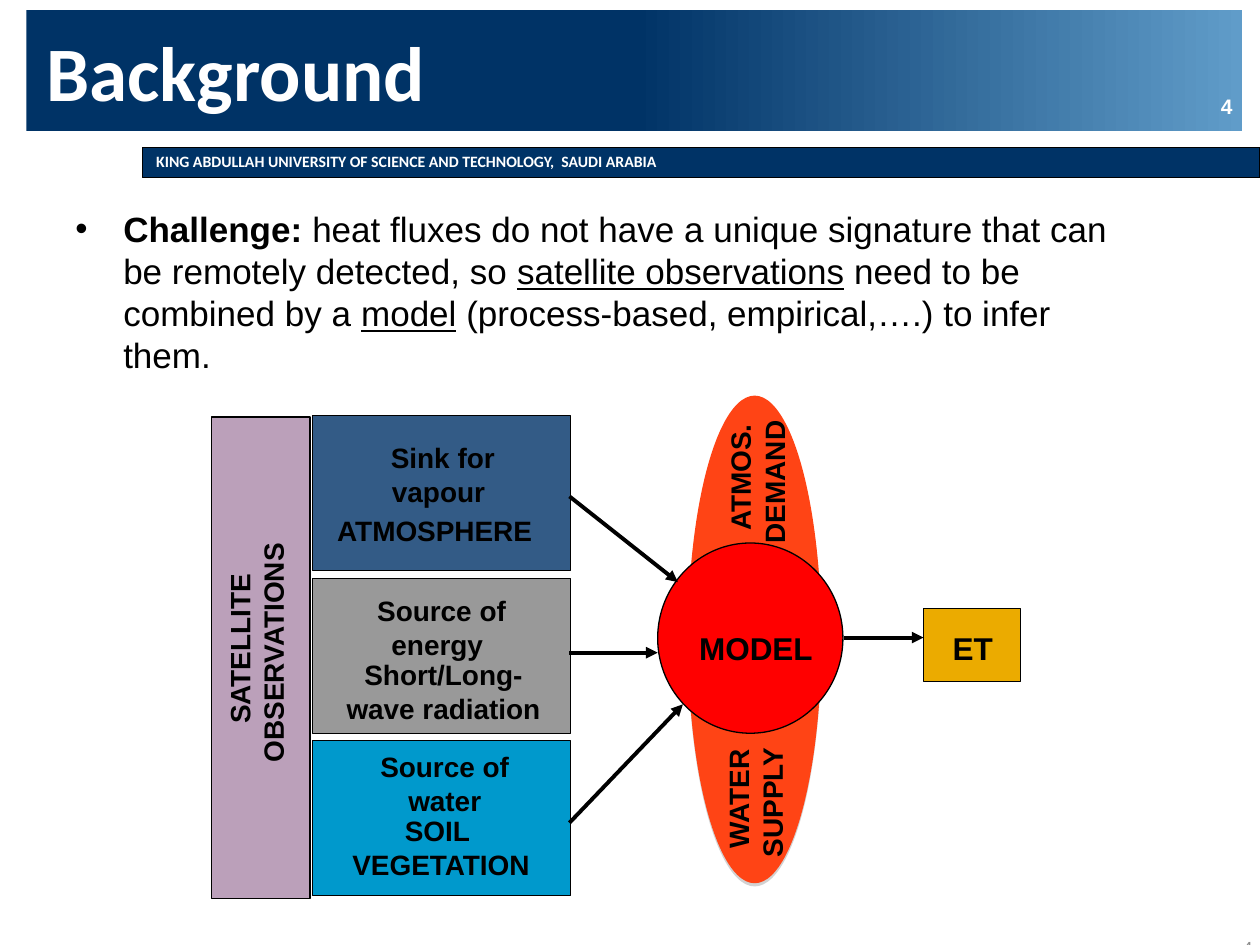
from dataclasses import dataclass

from lxml import etree
from pptx import Presentation, util as u
from pptx.dml.color import RGBColor
from pptx.enum import shapes, text
from pptx.oxml import ns

COLS, ROWS = 100, 75


@dataclass(frozen=True)
class Theme:
    navy: str = "003366"
    sky: str = "609CC9"
    white: str = "FFFFFF"
    black: str = "000000"
    grey: str = "8C8C8C"
    atmosphere: str = "335B86"
    energy: str = "999999"
    water: str = "0099CC"
    satellite: str = "BBA0BA"
    flux: str = "FF4415"
    model: str = "FF0000"
    output: str = "EBAB00"
    body_font: str = "Arial"
    head_font: str = "Calibri"
    title: int = 44
    body: int = 20
    large: int = 18
    label: int = 16
    number: int = 12
    small: int = 10
    banner: int = 9


T = Theme()
RECT, OVAL = shapes.MSO_SHAPE.RECTANGLE, shapes.MSO_SHAPE.OVAL
LEFT, CENTER, RIGHT = text.PP_ALIGN.LEFT, text.PP_ALIGN.CENTER, text.PP_ALIGN.RIGHT
TOP, MIDDLE, BOTTOM = text.MSO_ANCHOR.TOP, text.MSO_ANCHOR.MIDDLE, text.MSO_ANCHOR.BOTTOM


def add_xml(parent, tag, **attrs):
    return etree.SubElement(parent, ns.qn(tag), attrs)


def write(p, content, size=T.label, bold=True, color=T.black, font=T.body_font, underline=False):
    r = p.add_run()
    r.text = content
    r.font.size, r.font.bold, r.font.name = u.Pt(size), bold, font
    r.font.color.rgb = RGBColor.from_string(color)
    if underline:
        r.font.underline = True


class Canvas:
    """Style and current slide; lengths are grid columns and rows."""

    def __init__(self, prs):
        self.s = prs.slides.add_slide(prs.slide_layouts[6])
        self.col, self.row = prs.slide_width / COLS, prs.slide_height / ROWS

    def place(self, x, y, w, h):
        return [round(v * k) for v, k in zip((x, y, w, h), (self.col, self.row) * 2)]

    def shape(self, at, fill, kind=RECT, line=True):
        sp = self.s.shapes.add_shape(kind, *self.place(*at))
        sp.shadow.inherit = False
        if isinstance(fill, tuple):
            sp.fill.gradient()
            sp.fill.gradient_angle = 0
            for stop, color, pos in zip(sp.fill.gradient_stops, fill, (0.5, 1)):
                stop.color.rgb, stop.position = RGBColor.from_string(color), pos
        else:
            sp.fill.solid()
            sp.fill.fore_color.rgb = RGBColor.from_string(fill)
        if line:
            sp.line.color.rgb = RGBColor.from_string(T.black)
            sp.line.width = u.Pt(0.75)
        else:
            sp.line.fill.background()
        return sp

    def drop_shadow(self, sp):
        effects = sp._element.spPr.find(ns.qn("a:effectLst"))
        shadow = add_xml(effects, "a:outerShdw", blurRad="0", dist=str(u.Pt(1.8)),
                         dir="5400000", rotWithShape="0")
        add_xml(add_xml(shadow, "a:srgbClr", val="808080"), "a:alpha", val="35000")

    def text(self, at, *paragraphs, align=CENTER, anchor=TOP, inset=0.1,
             rotation=0, indent=0, bullet=None, **fmt):
        """Each paragraph is a string or a list of (string, format) runs."""
        sp = self.s.shapes.add_textbox(*self.place(*at))
        sp.rotation = rotation
        tf = sp.text_frame
        tf.word_wrap, tf.vertical_anchor = True, anchor
        tf.margin_left = tf.margin_right = u.Inches(inset)
        if anchor == TOP:
            tf.auto_size = text.MSO_AUTO_SIZE.SHAPE_TO_FIT_TEXT
        for i, runs in enumerate(paragraphs):
            p = tf.add_paragraph() if i else tf.paragraphs[0]
            p.alignment = align
            if indent:
                hang = round(indent * self.col)
                pPr = p._p.get_or_add_pPr()
                pPr.set("marL", str(hang))
                pPr.set("indent", str(-hang))
                if bullet:
                    add_xml(pPr, "a:buFont", typeface=T.body_font)
                    add_xml(pPr, "a:buChar", char=bullet)
            for content, extra in [(runs, {})] if isinstance(runs, str) else runs:
                write(p, content, **{**fmt, **extra})

    def arrow(self, x1, y1, x2, y2):
        c = self.s.shapes.add_connector(shapes.MSO_CONNECTOR.STRAIGHT, *self.place(x1, y1, x2, y2))
        c.line.color.rgb = RGBColor.from_string(T.black)
        c.line.width = u.Pt(2.25)
        add_xml(c.line._get_or_add_ln(), "a:tailEnd", type="triangle")
        add_xml(c._element.spPr, "a:effectLst")


def header(c):
    c.shape((11.3, 11.7, 88.7, 2.4), T.navy)
    c.text((12.4, 10.1, 87.3, 5.4), "KING ABDULLAH UNIVERSITY OF SCIENCE AND TECHNOLOGY,  SAUDI ARABIA",
           align=LEFT, anchor=MIDDLE, inset=0, indent=2,
           size=T.banner, color=T.white, font=T.head_font)
    c.shape((2.1, 0.8, 96.5, 9.6), (T.navy, T.sky), line=False)
    c.text((3.7, 1.3, 94.4, 8.5), "Background", align=LEFT, anchor=BOTTOM, inset=0,
           size=T.title, color=T.white, font=T.head_font)
    c.text((75.5, 6.9, 23.3, 4), "4", align=RIGHT, size=T.number, color=T.white)


def challenge(c):
    under = {"underline": True}
    c.text((5, 16, 84.8, 14.5), [
        ("Challenge:", {"bold": True}),
        (" heat fluxes do not have a unique signature that can be remotely detected, so ", {}),
        ("satellite observations", under),
        (" need to be combined by a ", {}),
        ("model", under),
        (" (process-based, empirical,….) to infer them.", {}),
    ], align=LEFT, indent=3.8, bullet="•", size=T.body, bold=False)


def diagram(c):
    def tall(label):
        return [(" ", {"size": T.large}), (label, {})]

    # Observed inputs, stacked at an equal pitch
    for i, fill in enumerate((T.atmosphere, T.energy, T.water)):
        c.shape((24.8, 33 + 12.9 * i, 20.5, 12.3), fill)
    c.shape((16.8, 33.1, 7.8, 38.2), T.satellite)

    # Model and its output
    c.drop_shadow(c.shape((54.6, 31.4, 10.6, 38.7), T.flux, OVAL, line=False))
    c.shape((52.2, 43.1, 14.7, 15.1), T.model, OVAL)
    c.shape((73.3, 48.3, 7.7, 5.8), T.output)

    # Arrows from inputs to model to output
    for ends in ((45.2, 39.4, 53.8, 46.2), (45.2, 51.8, 52.2, 51.8),
                 (45.2, 65.3, 54.2, 55.9), (67, 50.6, 73.3, 50.6)):
        c.arrow(*ends)

    # Upright labels
    for at, *paragraphs in (
        ((27.4, 34.2, 14.8, 6.7), tall("Sink for vapour")),
        ((24.3, 40.3, 20.4, 3.7), "ATMOSPHERE"),
        ((24.8, 46.3, 19.8, 6.7), tall("Source of energy")),
        ((25.6, 51.7, 19.2, 6.4), "Short/Long-wave radiation"),
        ((27.3, 59, 16, 6.4), "Source of water"),
        ((25.4, 64.1, 19.2, 6.4), "SOIL ", "VEGETATION"),
    ):
        c.text(at, *paragraphs)
    c.text((52.3, 49.4, 14.7, 3.4), " MODEL", size=T.large)
    c.text((68.8, 49.4, 16.8, 3.7), "ET", size=T.large)

    # Labels read from bottom to top
    for at, label in (
        ((4.6, 48.6, 31.5, 6.4), " SATELLITE OBSERVATIONS"),
        ((51.8, 60.5, 16.3, 6.4), " WATER SUPPLY"),
        ((51.8, 34.9, 16.3, 6.7), tall("ATMOS. DEMAND")),
    ):
        c.text(at, label, rotation=270)


def main():
    prs = Presentation()
    prs.slide_width, prs.slide_height = u.Inches(10), u.Inches(7.5)
    c = Canvas(prs)
    header(c)
    challenge(c)
    diagram(c)
    # Footer number
    c.text((79.6, 72.7, 20.8, 5), "4", align=RIGHT, anchor=MIDDLE,
           size=T.small, bold=False, color=T.grey)
    prs.save("out.pptx")


if __name__ == "__main__":
    main()
